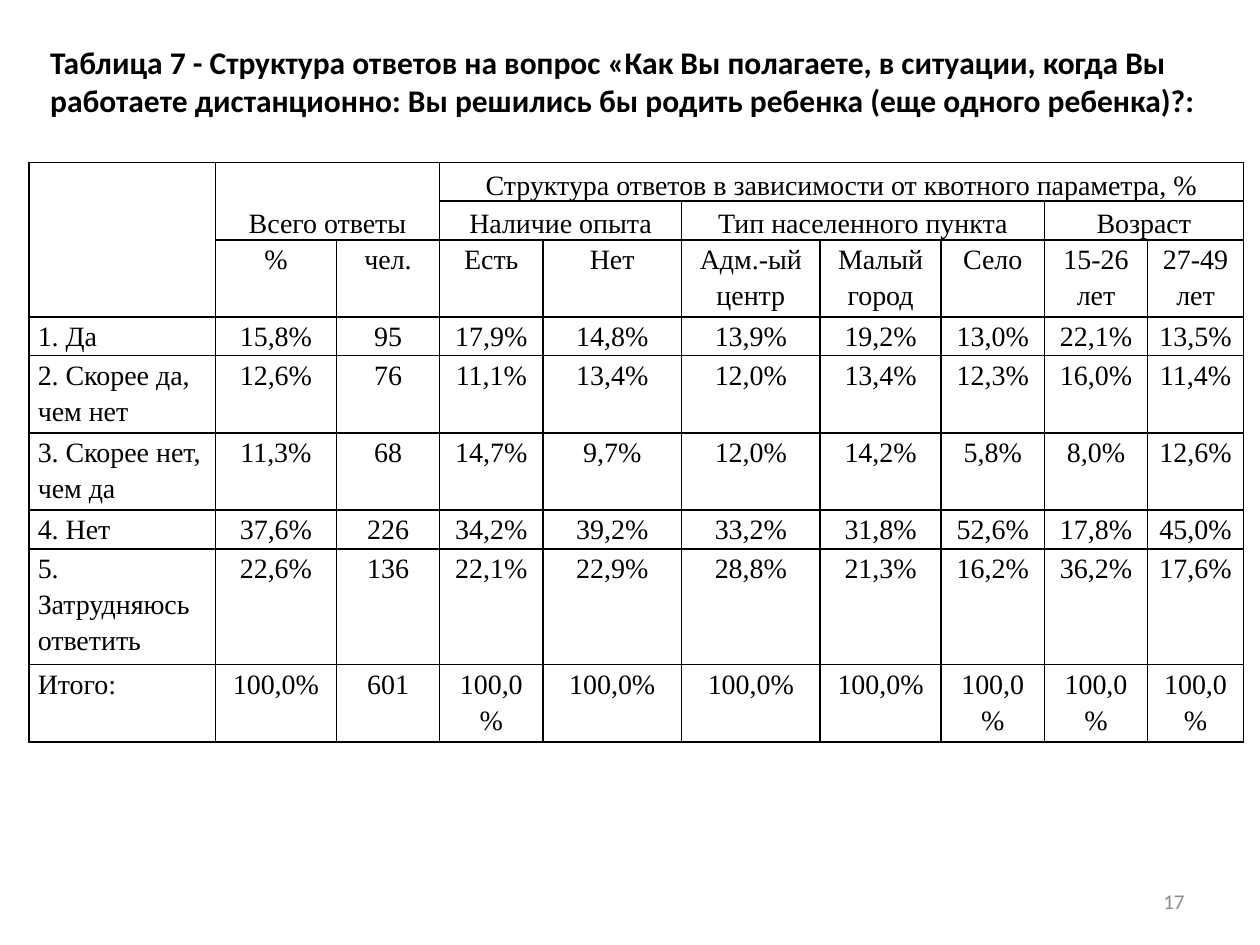
from dataclasses import dataclass

from lxml import etree
from pptx import Presentation
from pptx.dml.color import RGBColor
from pptx.enum import text
from pptx.oxml.ns import qn
from pptx.util import Inches, Pt


@dataclass(frozen=True)
class Theme:
    ink: str = "000000"
    muted: str = "8C8C8C"
    heading_font: str = "Calibri"
    table_font: str = "Times New Roman"
    title_size: int = 18
    table_size: int = 16
    number_size: int = 12
    border_width: int = 1


THEME = Theme()

TITLE = ("Таблица 7 - Структура ответов на вопрос «Как Вы полагаете, в ситуации, "
         "когда Вы работаете дистанционно: Вы решились бы родить ребенка "
         "(еще одного ребенка)?:")

COLUMN_WIDTHS = [1.48, 0.96, 0.82, 0.82, 1.1, 1.1, 0.96, 0.82, 0.82, 0.76]
ROW_LINES = [1, 1, 2, 1, 2, 2, 1, 3, 2]  # text lines that set each row's height
TABLE_HEIGHT = 4.6
HEADER_ROWS = 3

# Merged header cells: row, column, rows spanned, columns spanned, label
MERGED_HEADERS = [
    (0, 0, 3, 1, ""),
    (0, 1, 2, 2, "Всего ответы"),
    (0, 3, 1, 7, "Структура ответов в зависимости от квотного параметра, %"),
    (1, 3, 1, 2, "Наличие опыта"),
    (1, 5, 1, 3, "Тип населенного пункта"),
    (1, 8, 1, 2, "Возраст"),
]
COLUMN_LABELS = ["%", "чел.", "Есть", "Нет", "Адм.-ый\nцентр", "Малый город",
                 "Село", "15-26 лет", "27-49 лет"]
ANSWERS = [
    ("1. Да", "15,8% 95 17,9% 14,8% 13,9% 19,2% 13,0% 22,1% 13,5%"),
    ("2. Скорее да, чем нет", "12,6% 76 11,1% 13,4% 12,0% 13,4% 12,3% 16,0% 11,4%"),
    ("3. Скорее нет, чем да", "11,3% 68 14,7% 9,7% 12,0% 14,2% 5,8% 8,0% 12,6%"),
    ("4. Нет", "37,6% 226 34,2% 39,2% 33,2% 31,8% 52,6% 17,8% 45,0%"),
    ("5. Затрудняюсь ответить", "22,6% 136 22,1% 22,9% 28,8% 21,3% 16,2% 36,2% 17,6%"),
    ("Итого:", "100,0% 601" + " 100,0%" * 7),
]


def format_runs(paragraph, font, size, color, bold=False):
    for run in paragraph.runs:
        run.font.name = font
        run.font.size = Pt(size)
        run.font.bold = bold
        run.font.color.rgb = RGBColor.from_string(color)


def add_text(slide, box, content, size, color, bold=False,
             align=text.PP_ALIGN.LEFT, anchor=text.MSO_ANCHOR.TOP):
    shape = slide.shapes.add_textbox(*map(Inches, box))
    frame = shape.text_frame
    frame.word_wrap = True
    frame.vertical_anchor = anchor
    frame.text = content
    paragraph = frame.paragraphs[0]
    paragraph.alignment = align
    format_runs(paragraph, THEME.heading_font, size, color, bold)


def set_borders(cell):
    properties = cell._tc.get_or_add_tcPr()
    for position, side in enumerate(("lnL", "lnR", "lnT", "lnB")):
        line = etree.Element(qn(f"a:{side}"), w=str(Pt(THEME.border_width)))
        fill = etree.SubElement(line, qn("a:solidFill"))
        etree.SubElement(fill, qn("a:srgbClr"), val=THEME.ink)
        properties.insert(position, line)


def prepare_cell(cell):
    cell.margin_left = cell.margin_right = Inches(0.07)
    cell.margin_top = cell.margin_bottom = 0
    cell.fill.background()
    set_borders(cell)


def write_cell(cell, content, align=text.PP_ALIGN.CENTER):
    cell.text_frame.text = content
    for paragraph in cell.text_frame.paragraphs:
        paragraph.alignment = align
        paragraph.line_spacing = 1.15
        format_runs(paragraph, THEME.table_font, THEME.table_size, THEME.ink)


def add_answer_table(slide):
    frame = slide.shapes.add_table(
        len(ROW_LINES), len(COLUMN_WIDTHS), Inches(0.23), Inches(1.29),
        Inches(sum(COLUMN_WIDTHS)), Inches(TABLE_HEIGHT))
    table = frame.table
    table.first_row = table.horz_banding = False

    # Grid
    for column, width in zip(table.columns, COLUMN_WIDTHS):
        column.width = Inches(width)
    line_height = TABLE_HEIGHT / sum(ROW_LINES)
    for row, lines in zip(table.rows, ROW_LINES):
        row.height = Inches(lines * line_height)
    for cell in table.iter_cells():
        prepare_cell(cell)

    # Header
    for row, column, height, width, label in MERGED_HEADERS:
        cell = table.cell(row, column)
        cell.merge(table.cell(row + height - 1, column + width - 1))
        cell.vertical_anchor = text.MSO_ANCHOR.BOTTOM
        write_cell(cell, label)
    for column, label in enumerate(COLUMN_LABELS, start=1):
        write_cell(table.cell(HEADER_ROWS - 1, column), label)

    # Answers
    for row, (answer, values) in enumerate(ANSWERS, start=HEADER_ROWS):
        write_cell(table.cell(row, 0), answer, text.PP_ALIGN.LEFT)
        for column, value in enumerate(values.split(), start=1):
            write_cell(table.cell(row, column), value)


def main():
    presentation = Presentation()
    presentation.slide_width = Inches(10)
    presentation.slide_height = Inches(7.5)
    slide = presentation.slides.add_slide(presentation.slide_layouts[6])

    # Page number and title
    add_text(slide, (7.17, 6.95, 2.33, 0.4), "17", THEME.number_size, THEME.muted,
             align=text.PP_ALIGN.RIGHT, anchor=text.MSO_ANCHOR.MIDDLE)
    add_text(slide, (0.3, 0.29, 9.37, 1.01), TITLE, THEME.title_size, THEME.ink,
             bold=True)

    add_answer_table(slide)
    presentation.save("out.pptx")


if __name__ == "__main__":
    main()
